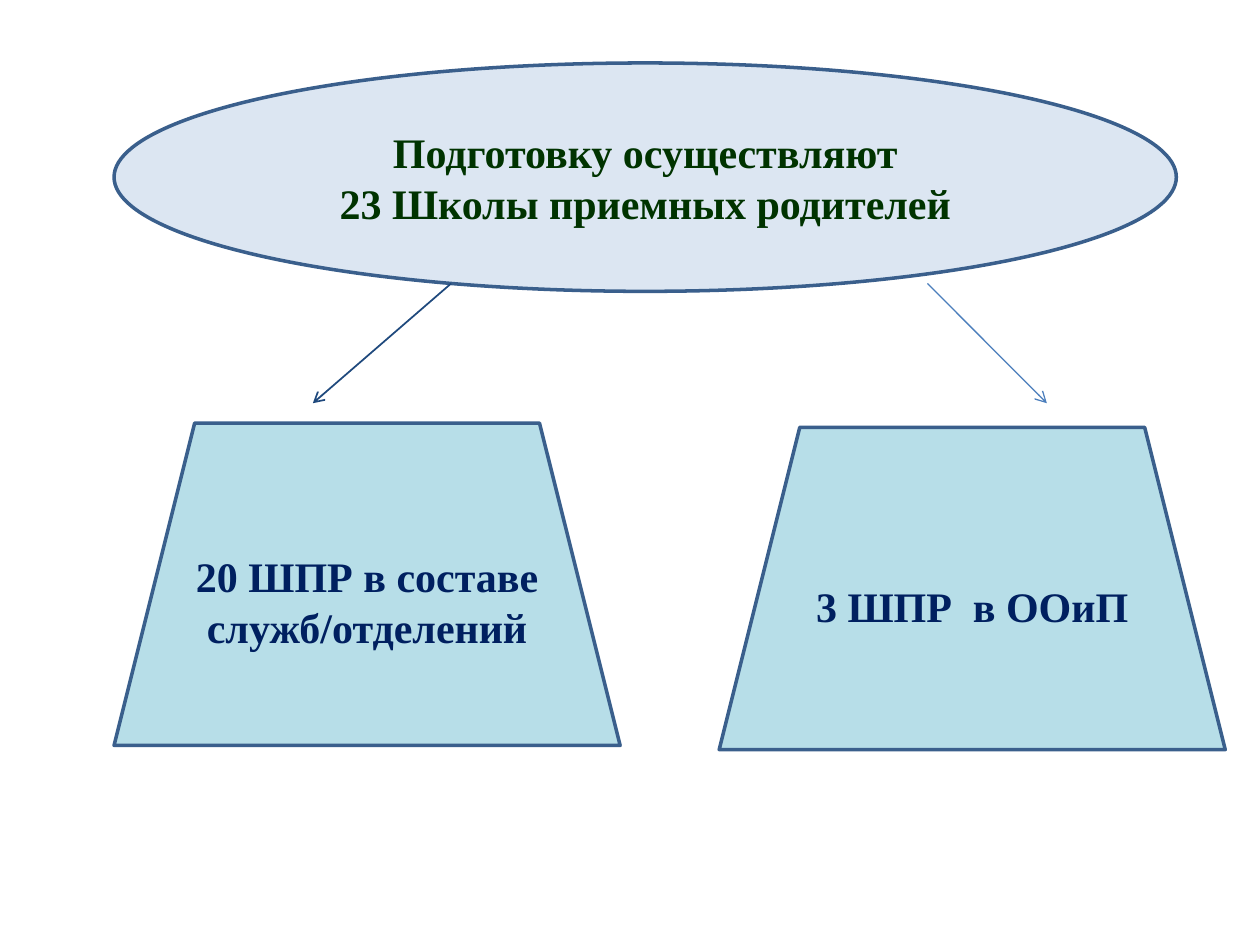
from lxml.etree import SubElement
from pptx import Presentation
from pptx.dml.color import RGBColor
from pptx.enum.shapes import MSO_CONNECTOR, MSO_SHAPE
from pptx.enum.text import MSO_ANCHOR, PP_ALIGN
from pptx.oxml.ns import qn
from pptx.util import Pt


def paint(target, color):
    """Give a fill a solid hex colour."""
    target.solid()
    target.fore_color.rgb = RGBColor.from_string(color)


def add_node(slide, kind, box, text, fill, ink):
    """Add an outlined shape with centred bold text."""
    node = slide.shapes.add_shape(kind, *map(Pt, box))
    node.shadow.inherit = False
    paint(node.fill, fill)
    paint(node.line.fill, "3A5F8C")
    node.line.width = Pt(2)
    frame = node.text_frame
    frame.word_wrap = True
    frame.vertical_anchor = MSO_ANCHOR.MIDDLE
    frame.text = text
    para = frame.paragraphs[0]
    para.alignment = PP_ALIGN.CENTER
    para.font.name = "Times New Roman"
    para.font.size = Pt(24)
    para.font.bold = True
    paint(para.font.fill, ink)


def add_arrow(slide, start, end, color, width):
    """Add a straight line with an open arrowhead at its end."""
    arrow = slide.shapes.add_connector(MSO_CONNECTOR.STRAIGHT, *map(Pt, start + end))
    paint(arrow.line.fill, color)
    arrow.line.width = Pt(width)
    SubElement(arrow.line._get_or_add_ln(), qn("a:tailEnd"), type="arrow")
    SubElement(arrow._element.spPr, qn("a:effectLst"))


def main():
    """Build the slide and save it."""
    deck = Presentation()
    deck.slide_width, deck.slide_height = Pt(720), Pt(540)
    slide = deck.slides.add_slide(deck.slide_layouts[6])
    add_node(slide, MSO_SHAPE.OVAL, (65.2, 36, 607, 130.5),
             "Подготовку осуществляют\v23 Школы приемных родителей", "DCE6F2", "003300")
    schools = [
        (65.2, 241.8, "20 ШПР в составе служб/отделений"),
        (411, 244.2, "3 ШПР  в ООиП"),
    ]
    for left, top, text in schools:
        add_node(slide, MSO_SHAPE.TRAPEZOID, (left, top, 289.2, 184.2),
                 text, "B7DEE8", "002060")
    add_arrow(slide, (257.8, 162), (178.8, 230.4), "1F497D", 1)
    add_arrow(slide, (530, 162), (598.2, 230.4), "4B7EBC", 0.75)
    deck.save("out.pptx")


if __name__ == "__main__":
    main()
